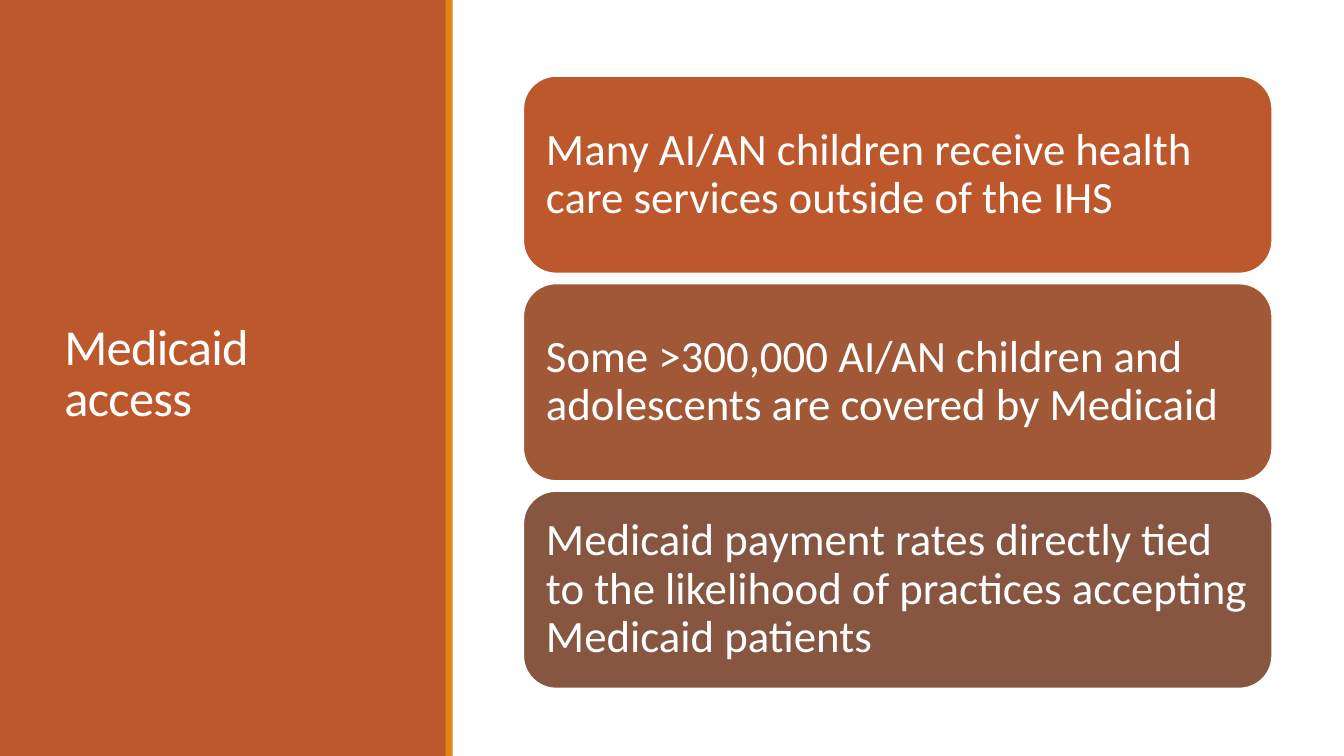
"""Build the Medicaid access slide: a title panel beside three stacked message cards."""
from dataclasses import dataclass

from pptx import Presentation
from pptx import util as u
from pptx.dml.color import RGBColor
from pptx.enum import shapes, text
from pptx.shapes.autoshape import Shape
from pptx.slide import Slide

WHITE = RGBColor(0xFF, 0xFF, 0xFF)
RUST = RGBColor(0xBD, 0x58, 0x2C)
SIENNA = RGBColor(0xA0, 0x58, 0x37)
UMBER = RGBColor(0x86, 0x56, 0x40)
ORANGE = RGBColor(0xE4, 0x83, 0x12)

FONT = "Calibri"
SLIDE_WIDTH = u.Inches(13.33)
SLIDE_HEIGHT = u.Inches(7.5)
COLUMN = SLIDE_WIDTH / 100
ROW = SLIDE_HEIGHT / 100
CARD_INSET = u.Inches(0.13)


@dataclass(frozen=True)
class Area:
    """A rectangle in grid columns and rows."""

    column: float
    row: float
    columns: float
    rows: float

    def lengths(self) -> tuple[int, int, int, int]:
        """Return left, top, width and height."""
        return (round(self.column * COLUMN), round(self.row * ROW),
                round(self.columns * COLUMN), round(self.rows * ROW))


@dataclass(frozen=True)
class Card:
    """A message and the colour behind it."""

    message: str
    color: RGBColor


PANEL = Area(0, 0, 33.25, 100)
ACCENT = Area(33.15, 0, 0.53, 100)
TITLE = Area(4.05, 7.6, 25, 84.13)
FIRST_CARD = Area(38.93, 10.05, 55.73, 26.13)
CARD_PITCH = 27.45

CARDS = (
    Card("Many AI/AN children receive health care services outside of the IHS", RUST),
    Card("Some >300,000 AI/AN children and adolescents are covered by Medicaid", SIENNA),
    Card("Medicaid payment rates directly tied to the likelihood of practices "
         "accepting Medicaid patients", UMBER),
)


def add_block(slide: Slide, area: Area, color: RGBColor,
              kind: shapes.MSO_SHAPE = shapes.MSO_SHAPE.RECTANGLE) -> Shape:
    """Add a filled shape without outline or shadow."""
    shape = slide.shapes.add_shape(kind, *area.lengths())
    shape.shadow.inherit = False
    shape.fill.solid()
    shape.fill.fore_color.rgb = color
    shape.line.fill.background()
    return shape


def write(shape: Shape, words: str, size: float, line_spacing: float) -> None:
    """Write one white, left-aligned, vertically centred paragraph."""
    frame = shape.text_frame
    frame.word_wrap = True
    frame.vertical_anchor = text.MSO_ANCHOR.MIDDLE
    paragraph = frame.paragraphs[0]
    paragraph.text = words
    paragraph.alignment = text.PP_ALIGN.LEFT
    paragraph.line_spacing = line_spacing
    paragraph.font.name = FONT
    paragraph.font.size = u.Pt(size)
    paragraph.font.color.rgb = WHITE


def add_title(slide: Slide, words: str) -> None:
    """Add the slightly tightened title."""
    title = slide.shapes.add_textbox(*TITLE.lengths())
    write(title, words, 36, 0.85)
    run = title.text_frame.paragraphs[0].runs[0]
    run.font._element.set("spc", "-50")


def add_card(slide: Slide, card: Card, index: int) -> None:
    """Add one rounded message card at its place in the stack."""
    area = Area(FIRST_CARD.column, FIRST_CARD.row + index * CARD_PITCH,
                FIRST_CARD.columns, FIRST_CARD.rows)
    shape = add_block(slide, area, card.color, shapes.MSO_SHAPE.ROUNDED_RECTANGLE)
    shape.line.color.rgb = WHITE
    shape.line.width = u.Pt(1.25)
    frame = shape.text_frame
    frame.margin_left = frame.margin_right = CARD_INSET
    frame.margin_top = frame.margin_bottom = CARD_INSET
    write(shape, card.message, 32, 0.9)


def main() -> None:
    """Build and save the presentation."""
    presentation = Presentation()
    presentation.slide_width = SLIDE_WIDTH
    presentation.slide_height = SLIDE_HEIGHT
    slide = presentation.slides.add_slide(presentation.slide_layouts[6])
    add_block(slide, PANEL, RUST)
    add_title(slide, "Medicaid access")
    add_block(slide, ACCENT, ORANGE)
    for index, card in enumerate(CARDS):
        add_card(slide, card, index)
    presentation.save("out.pptx")


if __name__ == "__main__":
    main()
